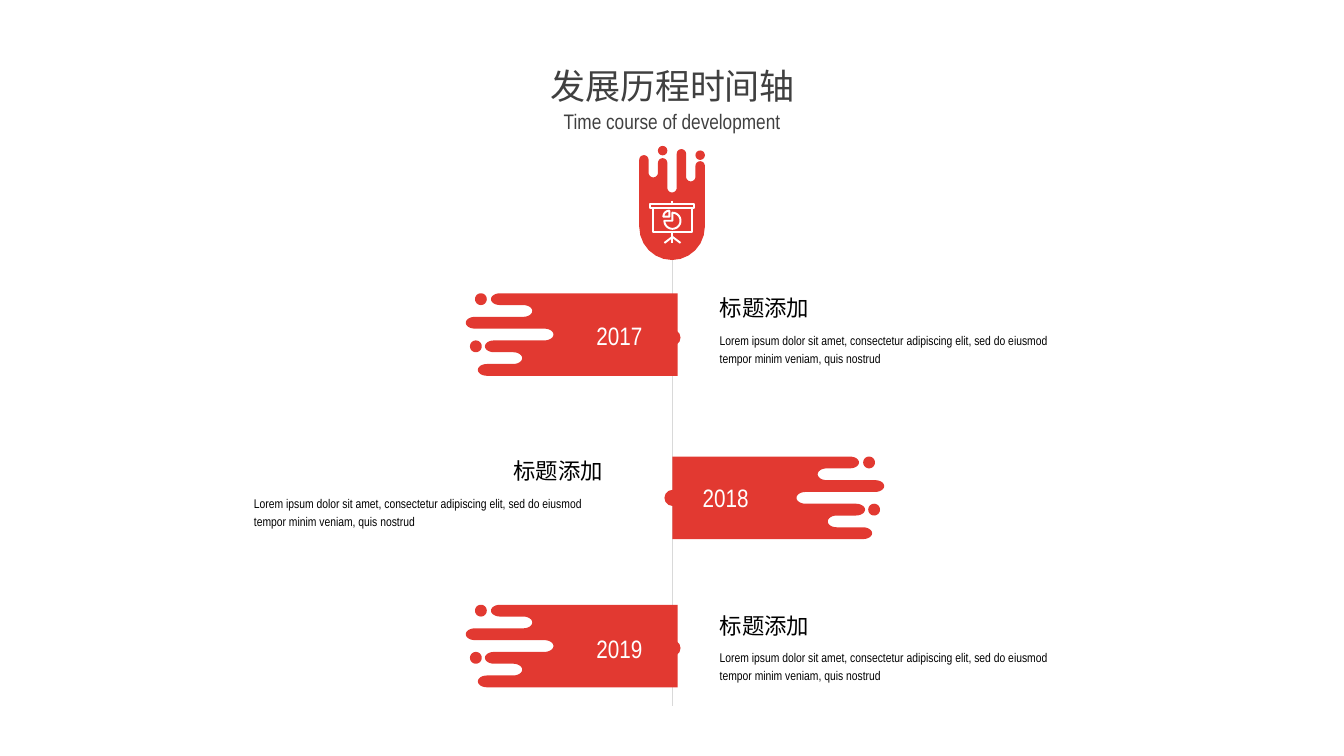
"""Build a vertical timeline slide with dripping red banners."""
from dataclasses import dataclass
from math import cos, pi, sin

from lxml.etree import SubElement
from pptx import Presentation
from pptx.dml.color import RGBColor
from pptx.enum.shapes import MSO_CONNECTOR as Connector, MSO_SHAPE as Preset
from pptx.enum.text import MSO_ANCHOR as Anchor, MSO_AUTO_SIZE as AutoSize, PP_ALIGN as Align
from pptx.oxml.ns import qn
from pptx.shapes.autoshape import Shape
from pptx.slide import Slide
from pptx.util import Inches, Pt

RED = RGBColor(0xE2, 0x39, 0x31)
WHITE = RGBColor(0xFF, 0xFF, 0xFF)
BLACK = RGBColor(0, 0, 0)
DARK_GREY = RGBColor(0x40, 0x40, 0x40)
LIGHT_GREY = RGBColor(0xD9, 0xD9, 0xD9)
FONT = "Arial Narrow"
AXIS_X = 6.67
LOREM = ("Lorem ipsum dolor sit amet, consectetur adipiscing elit, "
         "sed do eiusmod tempor minim veniam, quis nostrud")

Point = tuple[float, float]
Contour = list[Point]


@dataclass(frozen=True)
class Drip:
    """Alternating fingers and gaps, measured along and across the flow."""
    tips: list[float]
    lane: float
    cap: float
    base: float
    base_depth: float
    dots: list[tuple[int, float]]


@dataclass(frozen=True)
class Milestone:
    """One year of the timeline."""
    year: str
    banner_top: float
    year_top: float
    dot_top: float
    heading_top: float
    on_left: bool


BANNER = Drip([0.25, 0.66, 0, 0.87, 0.19, 0.56, 0.12], 0.117, 0.09, 2.1, 0,
              [(0, 0.15), (4, 0.1)])
HEADER = Drip([0.09, 0.31, 0.12, 0.46, 0.03, 0.35, 0.15], 0.093, 0.047, 0.8, 0.33,
              [(2, 0.045), (6, 0.09)])
MILESTONES = [
    Milestone("2017", 2.91, 3.09, 3.27, 2.87, True),
    Milestone("2018", 4.53, 4.70, 4.86, 4.49, False),
    Milestone("2019", 6.00, 6.20, 6.35, 6.02, True),
]


def arc(centre: Point, radius: float, start: float, sweep: float, steps: int = 24) -> Contour:
    """Return points on a circle, with angles in quarter turns from the right."""
    angles = [(start + sweep * step / steps) * pi / 2 for step in range(steps + 1)]
    return [(centre[0] + radius * cos(angle), centre[1] + radius * sin(angle))
            for angle in angles]


def bulge(along: float, start: float, end: float, depth: float) -> Contour:
    """Return half an ellipse that runs across the flow from start to end."""
    middle, half = (start + end) / 2, (end - start) / 2
    return [(along + depth * sin(pi * step / 12), middle - half * cos(pi * step / 12))
            for step in range(13)]


def drip_contours(drip: Drip) -> list[Contour]:
    """Return the body and the loose dots of a drip."""
    body: Contour = []
    for lane, tip in enumerate(drip.tips):
        depth = drip.cap if lane % 2 else -drip.cap
        body += bulge(tip - depth, lane * drip.lane, (lane + 1) * drip.lane, depth)
    body += bulge(drip.base, len(drip.tips) * drip.lane, 0, drip.base_depth)
    dots = [arc((along, (lane + 0.5) * drip.lane), drip.lane / 2, 0, 4)
            for lane, along in drip.dots]
    return [body, *dots]


def draw_contours(page: Slide, contours: list[Contour], closed: bool) -> Shape:
    """Draw all contours as one freeform."""
    paths = [[(Inches(x), Inches(y)) for x, y in contour] for contour in contours]
    first, *others = paths
    builder = page.shapes.build_freeform(*first[0])
    builder.add_line_segments(first[1:], close=closed)
    for outline in others:
        builder.move_to(*outline[0])
        builder.add_line_segments(outline[1:], close=closed)
    shape = builder.convert_to_shape()
    shape.shadow.inherit = False
    return shape


def paint(shape: Shape, color: RGBColor) -> None:
    """Fill a shape flat, with neither line nor shadow."""
    shape.shadow.inherit = False
    shape.fill.solid()
    shape.fill.fore_color.rgb = color
    shape.line.fill.background()


def write(box: Shape, text: str, size: float, color: RGBColor, align: Align = Align.LEFT,
          anchor: Anchor = Anchor.TOP, spacing: float = 1.0) -> None:
    """Set and format the text of a box."""
    frame = box.text_frame
    frame.text = text
    frame.word_wrap = True
    frame.auto_size = AutoSize.NONE
    frame.vertical_anchor = anchor
    para = frame.paragraphs[0]
    para.alignment = align
    para.line_spacing = spacing
    font = para.runs[0].font
    font.name, font.size, font.color.rgb = FONT, Pt(size), color


def add_box(page: Slide, left: float, top: float, width: float, height: float) -> Shape:
    """Add an empty text box."""
    return page.shapes.add_textbox(Inches(left), Inches(top), Inches(width), Inches(height))


def draw_axis(page: Slide) -> None:
    """Draw the vertical line of the timeline."""
    axis = page.shapes.add_connector(Connector.STRAIGHT, Inches(AXIS_X), Inches(2.58),
                                     Inches(AXIS_X), Inches(7))
    axis.line.color.rgb = LIGHT_GREY
    axis.line.width = Pt(0.25)
    SubElement(axis._element.spPr, qn("a:effectLst"))


def draw_milestone(page: Slide, item: Milestone) -> None:
    """Draw the banner, dot, year and texts of a milestone."""
    tip_x, direction = (4.62, 1) if item.on_left else (8.77, -1)
    contours = [[(tip_x + direction * along, item.banner_top + across)
                 for along, across in contour] for contour in drip_contours(BANNER)]
    paint(draw_contours(page, contours, True), RED)
    dot = page.shapes.add_shape(Preset.OVAL, Inches(AXIS_X - 0.08), Inches(item.dot_top),
                                Inches(0.16), Inches(0.16))
    paint(dot, RED)
    year_left, year_align = (5.36, Align.RIGHT) if item.on_left else (6.87, Align.LEFT)
    write(add_box(page, year_left, item.year_top, 1.11, 0.47), item.year, 18, WHITE,
          year_align, Anchor.MIDDLE)
    body_left, heading_left, heading_align = (
        (7.04, 7.04, Align.LEFT) if item.on_left else (2.42, 4.81, Align.RIGHT))
    write(add_box(page, body_left, item.heading_top + 0.35, 3.66, 0.45), LOREM, 9, BLACK,
          spacing=1.2)
    write(add_box(page, heading_left, item.heading_top, 1.27, 0.37), "标题添加", 16, BLACK,
          heading_align)


def draw_header(page: Slide) -> None:
    """Draw the dripping badge and its presentation board icon."""
    contours = [[(6.34 + across, 1.45 + along) for along, across in contour]
                for contour in drip_contours(HEADER)]
    paint(draw_contours(page, contours, True), RED)
    rail = [(6.45, 2.02), (6.88, 2.02), (6.88, 2.06), (6.45, 2.06), (6.45, 2.02)]
    board = [(6.48, 2.06), (6.48, 2.3), (6.86, 2.3), (6.86, 2.06)]
    hook = [(AXIS_X, 1.99), (AXIS_X, 2.02)]
    pole = [(AXIS_X, 2.3), (AXIS_X, 2.41)]
    legs = [(6.59, 2.41), (AXIS_X, 2.35), (6.75, 2.41)]
    centre, corner = (AXIS_X, 2.19), (6.64, 2.15)
    pie = [centre, *arc(centre, 0.08, -1, 3), centre]
    slice_cut = [corner, *arc(corner, 0.06, -2, 1), corner]
    icon = draw_contours(page, [rail, board, hook, pole, legs, pie, slice_cut], False)
    icon.fill.background()
    icon.line.color.rgb = WHITE
    icon.line.width = Pt(1.4)


def main() -> None:
    """Build and save the deck."""
    deck = Presentation()
    deck.slide_width, deck.slide_height = Inches(13.33), Inches(7.5)
    page = deck.slides.add_slide(deck.slide_layouts[5])
    title = page.shapes.title
    title.left, title.top = Inches(4.99), Inches(0.59)
    title.width, title.height = Inches(3.36), Inches(0.52)
    write(title, "发展历程时间轴", 25, DARK_GREY, Align.CENTER)
    draw_axis(page)
    for item in MILESTONES:
        draw_milestone(page, item)
    draw_header(page)
    write(add_box(page, 4.46, 1.03, 4.41, 0.35), "Time course of development", 15, DARK_GREY,
          Align.CENTER)
    deck.save("out.pptx")


if __name__ == "__main__":
    main()
